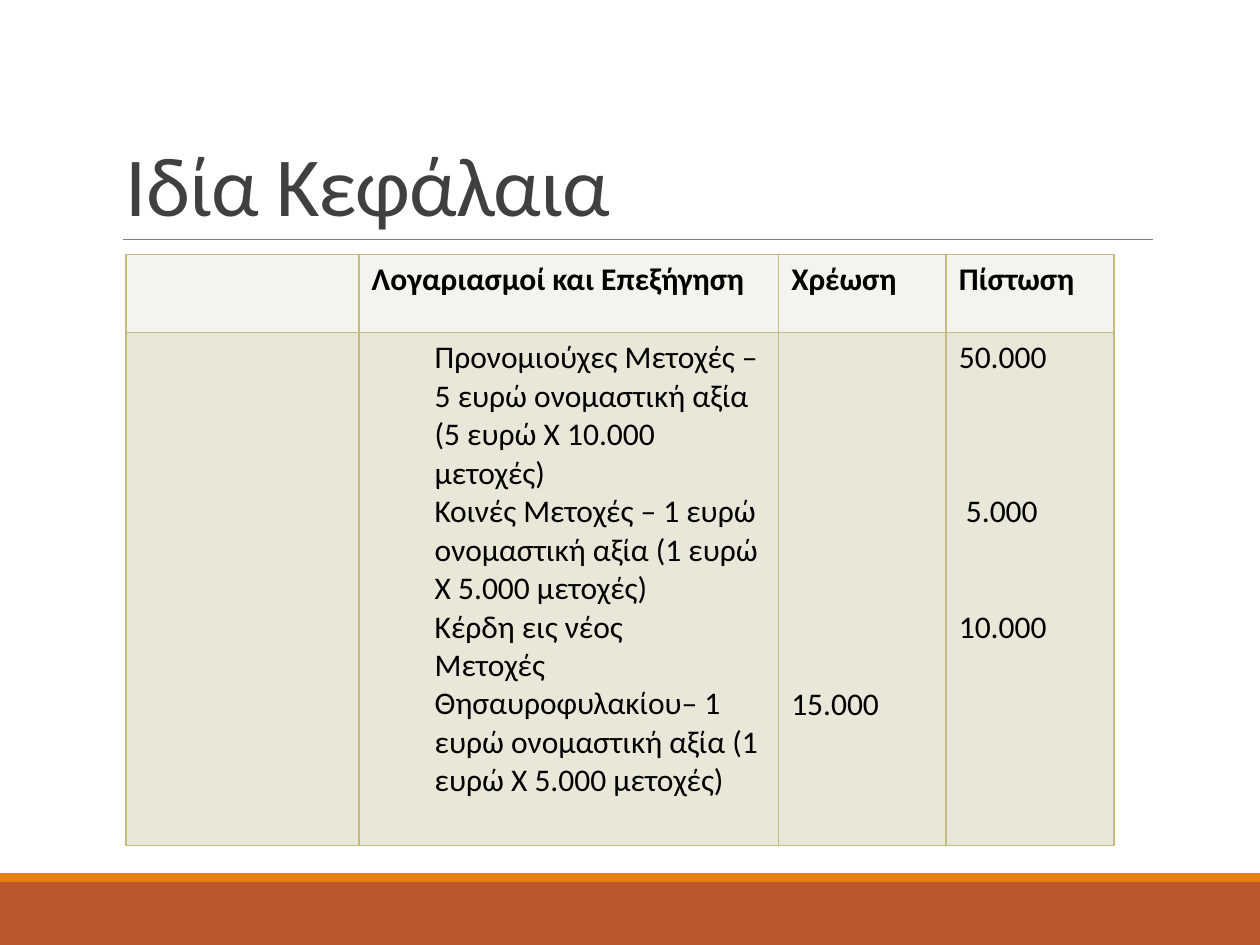
from lxml.etree import SubElement
from pptx import Presentation
from pptx.dml.color import RGBColor
from pptx.enum.shapes import MSO_CONNECTOR, MSO_SHAPE
from pptx.enum.text import MSO_ANCHOR
from pptx.oxml.ns import qn
from pptx.util import Inches, Pt

WHITE = RGBColor(0xFF, 0xFF, 0xFF)
BLACK = RGBColor(0x00, 0x00, 0x00)
RUST = RGBColor(0xBD, 0x58, 0x2C)
ORANGE = RGBColor(0xE4, 0x83, 0x12)
GREY = RGBColor(0x80, 0x80, 0x80)
CHARCOAL = RGBColor(0x40, 0x40, 0x40)
HEADER_FILL = RGBColor(0xF4, 0xF3, 0xED)
BODY_FILL = RGBColor(0xE9, 0xE7, 0xD8)
BORDER = RGBColor(0xC2, 0xBC, 0x80)

LINE_POINTS = 22
COLUMN_WIDTHS = (1.85, 3.33, 1.33, 1.33)
ROW_HEIGHTS = (0.62, 4.07)
HEADERS = ("", "Λογαριασμοί και Επεξήγηση", "Χρέωση", "Πίστωση")
ACCOUNTS = (
    "Προνομιούχες Μετοχές – 5 ευρώ ονομαστική αξία (5 ευρώ Χ 10.000 μετοχές)",
    "Κοινές Μετοχές – 1 ευρώ ονομαστική αξία (1 ευρώ Χ 5.000 μετοχές)",
    "Κέρδη εις νέος",
    "Μετοχές Θησαυροφυλακίου– 1 ευρώ ονομαστική αξία (1 ευρώ Χ 5.000 μετοχές)",
)
CREDITS = (("50.000", 0), (" 5.000", 3), ("10.000", 2))
DEBIT, DEBIT_LINES_ABOVE = "15.000", 9


def write_text(para, text, size=18, color=BLACK, bold=False, indent=0, lines_before=0):
    """Write one formatted paragraph and return its span."""
    span = para.add_run()
    span.text = text
    span.font.name = "Calibri"
    span.font.size = Pt(size)
    span.font.bold = bold
    span.font.color.rgb = color
    if indent:
        properties = para._p.get_or_add_pPr()
        properties.set("marL", str(Inches(indent)))
        properties.set("indent", "0")
    if lines_before:
        para.space_before = Pt(lines_before * LINE_POINTS)
    return span


def add_footer(page, left, top, width, height):
    """Draw the thin orange stripe above the rust band."""
    stripe = 0.07
    bands = ((top, stripe, ORANGE), (top + stripe, height - stripe, RUST))
    for band_top, band_height, color in bands:
        band = page.shapes.add_shape(MSO_SHAPE.RECTANGLE, Inches(left), Inches(band_top),
                                     Inches(width), Inches(band_height))
        band.shadow.inherit = False
        band.fill.solid()
        band.fill.fore_color.rgb = color
        band.line.fill.background()


def add_title(page, left, top, width, height):
    """Place the title at the bottom of its box, with a rule beneath."""
    box = page.shapes.add_textbox(Inches(left), Inches(top), Inches(width), Inches(height))
    frame = box.text_frame
    frame.word_wrap = True
    frame.vertical_anchor = MSO_ANCHOR.BOTTOM
    para = frame.paragraphs[0]
    para.line_spacing = 0.85
    span = write_text(para, "Ιδία Κεφάλαια", size=48, color=CHARCOAL)
    span.font._element.set("spc", "-50")
    bottom = Inches(top + height)
    rule = page.shapes.add_connector(MSO_CONNECTOR.STRAIGHT, Inches(left + 0.08), bottom,
                                     Inches(left + width), bottom)
    rule.line.color.rgb = GREY
    rule.line.width = Pt(0.5)
    SubElement(rule._element.spPr, qn("a:effectLst"))


def style_cell(cell, fill):
    """Give a cell its borders and its fill."""
    properties = cell._tc.get_or_add_tcPr()
    for side in ("lnL", "lnR", "lnT", "lnB"):
        line = SubElement(properties, qn(f"a:{side}"), w=str(Pt(1)))
        SubElement(SubElement(line, qn("a:solidFill")), qn("a:srgbClr"), val=str(BORDER))
    cell.fill.solid()
    cell.fill.fore_color.rgb = fill


def write_list(cell, items):
    """Write text and format pairs as the paragraphs of a cell."""
    frame = cell.text_frame
    for index, (text, style) in enumerate(items):
        para = frame.add_paragraph() if index else frame.paragraphs[0]
        write_text(para, text, **style)


def add_ledger(page, left, top):
    """Build the table of accounts, debits and credits."""
    table = page.shapes.add_table(len(ROW_HEIGHTS), len(COLUMN_WIDTHS), Inches(left), Inches(top),
                                  Inches(sum(COLUMN_WIDTHS)), Inches(sum(ROW_HEIGHTS))).table
    table.first_row = table.horz_banding = False
    for column, width in zip(table.columns, COLUMN_WIDTHS):
        column.width = Inches(width)
    for row, height, fill in zip(table.rows, ROW_HEIGHTS, (HEADER_FILL, BODY_FILL)):
        row.height = Inches(height)
        for cell in row.cells:
            style_cell(cell, fill)
    for cell, text in zip(table.rows[0].cells, HEADERS):
        if text:
            write_list(cell, [(text, {"bold": True})])
    _, accounts, debit, credit = table.rows[1].cells
    write_list(accounts, [(text, {"indent": 0.5}) for text in ACCOUNTS])
    write_list(debit, [(DEBIT, {})])
    debit.margin_top = Inches(0.05) + Pt(DEBIT_LINES_ABOVE * LINE_POINTS)
    write_list(credit, [(text, {"lines_before": lines}) for text, lines in CREDITS])


def main():
    """Build the deck and save it."""
    deck = Presentation()
    deck.slide_width, deck.slide_height = Inches(10), Inches(7.5)
    page = deck.slides.add_slide(deck.slide_layouts[6])
    page.background.fill.solid()
    page.background.fill.fore_color.rgb = WHITE
    add_footer(page, 0, 6.93, 10, 0.57)
    add_title(page, 0.9, 0.31, 8.25, 1.59)
    add_ledger(page, 1, 2.02)
    deck.save("out.pptx")


if __name__ == "__main__":
    main()
